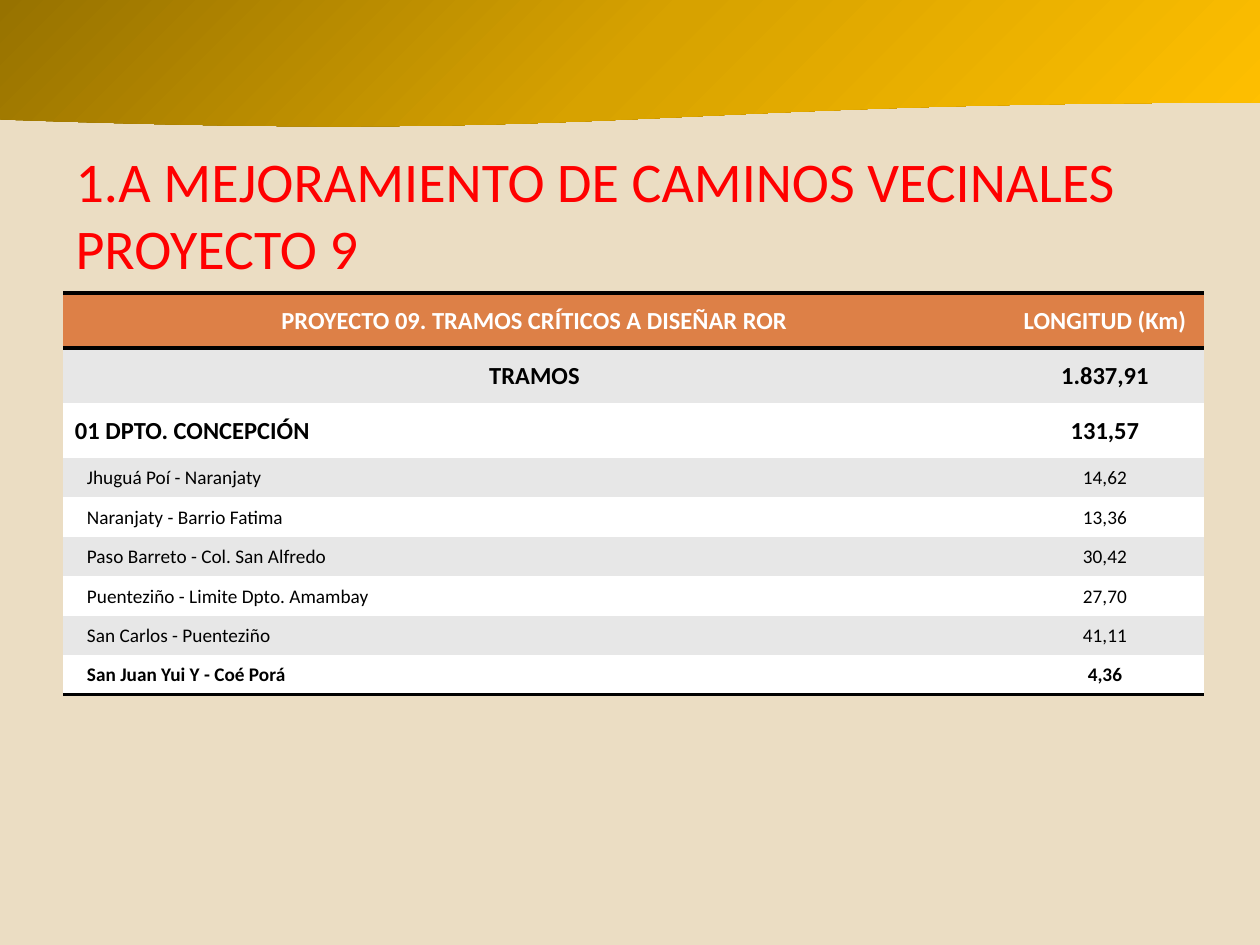
from lxml import etree
from pptx import Presentation
from pptx import util as u
from pptx.dml.color import RGBColor
from pptx.enum import shapes, text
from pptx.oxml.ns import qn

PX_PER_INCH = 126
NO_GRID_STYLE = "{2D5ABB26-0587-4C30-8999-92F81FD0307C}"


def px(length):
    return u.Inches(length / PX_PER_INCH)


def color(hex_string):
    return RGBColor.from_string(hex_string)


def set_attributes(target, values):
    for name, value in values.items():
        setattr(target, name, value)


class SlideBuilder:
    font_name = "Calibri"
    background = "EBDDC3"
    rule = "000000"

    def __init__(self, presentation):
        self.slide = presentation.slides.add_slide(presentation.slide_layouts[5])
        fill = self.slide.background.fill
        fill.solid()
        fill.fore_color.rgb = color(self.background)

    def format_text(self, frame, size, font_color, align, bold=False):
        for paragraph in frame.paragraphs:
            paragraph.alignment = align
            for run in paragraph.runs:
                set_attributes(run.font, {"name": self.font_name, "size": u.Pt(size), "bold": bold})
                run.font.color.rgb = color(font_color)

    def title(self, content, left, top, width, height, size, font_color):
        shape = self.slide.shapes.title
        set_attributes(shape, {"left": px(left), "top": px(top),
                               "width": px(width), "height": px(height)})
        frame = shape.text_frame
        frame.text = content
        set_attributes(frame, {"word_wrap": True, "auto_size": text.MSO_AUTO_SIZE.NONE,
                               "vertical_anchor": text.MSO_ANCHOR.MIDDLE})
        self.format_text(frame, size, font_color, text.PP_ALIGN.LEFT)

    def wave(self, left, top, width, height, stops):
        shape = self.slide.shapes.add_shape(
            shapes.MSO_SHAPE.FLOWCHART_DOCUMENT, px(left), px(top), px(width), px(height))
        shape.shadow.inherit = False
        shape.line.fill.background()
        shape.fill.gradient()
        shape.fill.gradient_angle = 315
        stop_list = next(shape._element.spPr.iter(qn("a:gsLst")))
        stop_list.clear()
        for percent, hex_string in stops:
            stop = etree.SubElement(stop_list, qn("a:gs"), pos=str(percent * 1000))
            etree.SubElement(stop, qn("a:srgbClr"), val=hex_string)

    def border(self, cell, side):
        line = etree.SubElement(cell._tc.get_or_add_tcPr(), qn(f"a:ln{side}"), w=str(u.Pt(2)))
        fill = etree.SubElement(line, qn("a:solidFill"))
        etree.SubElement(fill, qn("a:srgbClr"), val=self.rule)

    def cell(self, cell, content, fill_color, borders, indent, **text_format):
        for side in borders:
            self.border(cell, side)
        cell.fill.solid()
        cell.fill.fore_color.rgb = color(fill_color)
        set_attributes(cell, {"margin_left": px(indent), "margin_right": px(1),
                              "margin_top": px(1), "margin_bottom": 0,
                              "vertical_anchor": text.MSO_ANCHOR.MIDDLE})
        cell.text = content
        self.format_text(cell.text_frame, **text_format)

    def table(self, left, top, widths, heights, rows):
        frame = self.slide.shapes.add_table(
            len(rows), len(widths), px(left), px(top), px(sum(widths)), px(sum(heights)))
        table = frame.table
        next(frame._element.iter(qn("a:tableStyleId"))).text = NO_GRID_STYLE
        for column, width in zip(table.columns, widths):
            column.width = px(width)
        for row, height in zip(table.rows, heights):
            row.height = px(height)

        last = len(rows) - 1
        for i, (name, length, indent) in enumerate(rows):
            header = i == 0
            fill_color = "DD8047" if header else ("FFFFFF", "E7E7E7")[i % 2]
            borders = "TB" if header else "B" if i == last else ""
            style = {"size": 14 if i < 3 else 11, "bold": i < 3 or i == last,
                     "font_color": "FFFFFF" if header else "000000"}
            name_align = text.PP_ALIGN.LEFT if indent > 1 else text.PP_ALIGN.CENTER
            self.cell(table.cell(i, 0), name, fill_color, borders, indent,
                      align=name_align, **style)
            self.cell(table.cell(i, 1), length, fill_color, borders, 1,
                      align=text.PP_ALIGN.CENTER, **style)


# Each row: section, length in km, indent in px
ROWS = [
    ("PROYECTO 09. TRAMOS CRÍTICOS A DISEÑAR ROR", "LONGITUD (Km)", 1),
    ("TRAMOS", "1.837,91", 1),
    ("01 DPTO. CONCEPCIÓN", "131,57", 12),
    ("Jhuguá Poí - Naranjaty", "14,62", 24),
    ("Naranjaty - Barrio Fatima", "13,36", 24),
    ("Paso Barreto - Col. San Alfredo", "30,42", 24),
    ("Puenteziño - Limite Dpto. Amambay", "27,70", 24),
    ("San Carlos - Puenteziño", "41,11", 24),
    ("San Juan Yui Y - Coé Porá", "4,36", 24),
]


def main():
    presentation = Presentation()
    set_attributes(presentation, {"slide_width": px(1260), "slide_height": px(945)})
    builder = SlideBuilder(presentation)

    # Top band
    builder.wave(0, 0, 1260, 128, [(0, "977200"), (50, "D7A200"), (100, "FFC000")])

    # Title
    builder.title("1.A MEJORAMIENTO DE CAMINOS VECINALES \vPROYECTO 9",
                  63, 135, 1134, 158, size=32, font_color="FF0000")

    # Road sections
    builder.table(63, 293, [943, 198], [55] * 3 + [39, 40] * 3, ROWS)

    presentation.save("out.pptx")


if __name__ == "__main__":
    main()
